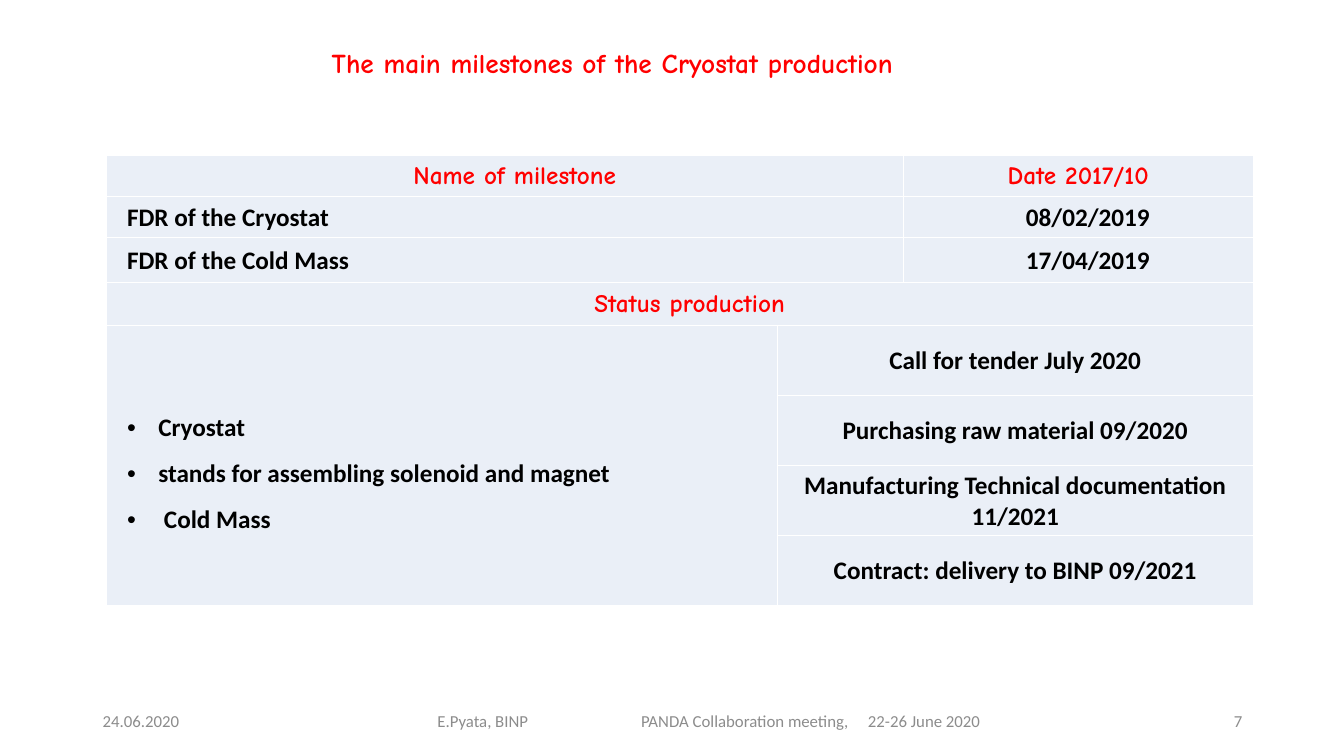
"""Build the slide on the main milestones of the Cryostat production."""
from dataclasses import dataclass

from lxml.etree import SubElement
from pptx import Presentation
from pptx.dml.color import RGBColor
from pptx.enum.text import MSO_ANCHOR, MSO_AUTO_SIZE, PP_ALIGN
from pptx.oxml import parse_xml
from pptx.oxml.ns import nsdecls, qn
from pptx.slide import Slide
from pptx.table import Table, _Cell
from pptx.text.text import TextFrame
from pptx.util import Inches, Pt


@dataclass(frozen=True)
class Theme:
    heading_font: str = "Comic Neue"
    body_font: str = "Calibri"
    heading: str = "FF0000"
    body: str = "000000"
    footer: str = "8C8C8C"
    cell: str = "EAEFF7"
    border: str = "FFFFFF"
    title_size: float = 19.5
    table_size: float = 18
    footer_size: float = 12


@dataclass(frozen=True)
class Entry:
    row: int
    column: int
    lines: tuple[str, ...]
    row_span: int = 1
    column_span: int = 1
    left_margin: float = 0.2
    align: PP_ALIGN = PP_ALIGN.CENTER
    heading: bool = False
    bulleted: bool = False


@dataclass(frozen=True)
class Footer:
    text: str
    left: float
    width: float
    align: PP_ALIGN = PP_ALIGN.LEFT
    tabs: tuple[float, ...] = ()


THEME = Theme()
COLUMN_WIDTHS = (6.65, 1.25, 3.47)
STATUS_ROW = 4
STATUS_STEPS = (
    "Call for tender July 2020",
    "Purchasing raw material 09/2020",
    "Manufacturing Technical documentation 11/2021",
    "Contract: delivery to BINP 09/2021",
)
ROW_HEIGHTS = (0.41, 0.41, 0.44, 0.43) + (2.78 / len(STATUS_STEPS),) * len(STATUS_STEPS)
PRODUCTS = ("Cryostat", "stands for assembling solenoid and magnet", " Cold Mass")
ENTRIES = (
    Entry(0, 0, ("Name of milestone",), column_span=2, heading=True),
    Entry(0, 2, ("Date 2017/10",), left_margin=0.01, heading=True),
    Entry(1, 0, ("FDR of the Cryostat",), column_span=2, align=PP_ALIGN.LEFT),
    Entry(1, 2, ("08/02/2019",)),
    Entry(2, 0, ("FDR of the Cold Mass",), column_span=2, align=PP_ALIGN.LEFT),
    Entry(2, 2, ("17/04/2019",)),
    Entry(3, 0, ("Status production",), column_span=3, heading=True),
    Entry(STATUS_ROW, 0, PRODUCTS, row_span=len(STATUS_STEPS), align=PP_ALIGN.LEFT, bulleted=True),
    *(
        Entry(STATUS_ROW + index, 1, (step,), column_span=2, left_margin=0.01)
        for index, step in enumerate(STATUS_STEPS)
    ),
)
FOOTERS = (
    Footer("24.06.2020", 0.92, 3),
    Footer(
        "E.Pyata, BINP\tPANDA Collaboration meeting,\t22-26 June 2020",
        4.24, 5.8, tabs=(2.02, 4.27),
    ),
    Footer("7", 9.42, 3, PP_ALIGN.RIGHT),
)


def write_text(
    frame: TextFrame,
    *lines: str,
    size: float,
    color: str,
    font: str = THEME.body_font,
    bold: bool = False,
    align: PP_ALIGN = PP_ALIGN.LEFT,
    line_spacing: float = 1.0,
    bulleted: bool = False,
    tabs: tuple[float, ...] = (),
) -> None:
    """Fill a text frame with one formatted paragraph for each line."""
    for index, line in enumerate(lines):
        paragraph = frame.paragraphs[0] if index == 0 else frame.add_paragraph()
        properties = paragraph._p.get_or_add_pPr()
        if bulleted:
            properties.set("marL", str(Inches(0.31)))
            properties.set("indent", str(-Inches(0.31)))
            SubElement(properties, qn("a:buFont"), typeface="Arial")
            SubElement(properties, qn("a:buChar"), char="•")
        if tabs:
            tab_list = SubElement(properties, qn("a:tabLst"))
            for position in tabs:
                SubElement(tab_list, qn("a:tab"), pos=str(Inches(position)), algn="l")
        paragraph.alignment = align
        paragraph.line_spacing = line_spacing
        paragraph.space_before = Pt(0)
        run = paragraph.add_run()
        run.text = line
        run.font.name = font
        run.font.size = Pt(size)
        run.font.bold = bold
        run.font.color.rgb = RGBColor.from_string(color)


def add_title(slide: Slide, text: str) -> None:
    """Place and format the title placeholder."""
    title = slide.shapes.title
    title.left, title.top = Inches(0.92 + 0.56), Inches(0.47)
    title.width, title.height = Inches(9.29), Inches(0.4)
    frame = title.text_frame
    frame.auto_size = MSO_AUTO_SIZE.NONE
    frame.vertical_anchor = MSO_ANCHOR.TOP
    write_text(
        frame, text, size=THEME.title_size, color=THEME.heading,
        font=THEME.heading_font, bold=True, align=PP_ALIGN.CENTER, line_spacing=0.8,
    )


def style_cell(cell: _Cell) -> None:
    """Give a cell its fill, borders, margins and anchor."""
    cell.fill.solid()
    cell.fill.fore_color.rgb = RGBColor.from_string(THEME.cell)
    cell.margin_left = cell.margin_right = cell.margin_top = Inches(0.01)
    cell.margin_bottom = 0
    cell.vertical_anchor = MSO_ANCHOR.MIDDLE
    properties = cell._tc.get_or_add_tcPr()
    for index, side in enumerate("LRTB"):
        properties.insert(index, parse_xml(
            f'<a:ln{side} {nsdecls("a")} w="{Pt(1)}"><a:solidFill>'
            f'<a:srgbClr val="{THEME.border}"/></a:solidFill></a:ln{side}>'
        ))


def fill_entry(table: Table, entry: Entry) -> None:
    """Merge the cells of an entry and write its text."""
    cell = table.cell(entry.row, entry.column)
    if entry.row_span * entry.column_span > 1:
        cell.merge(table.cell(
            entry.row + entry.row_span - 1, entry.column + entry.column_span - 1
        ))
    cell.margin_left = Inches(entry.left_margin)
    write_text(
        cell.text_frame, *entry.lines, size=THEME.table_size, bold=True,
        color=THEME.heading if entry.heading else THEME.body,
        font=THEME.heading_font if entry.heading else THEME.body_font,
        align=entry.align, bulleted=entry.bulleted,
        line_spacing=1.5 if entry.bulleted else 1.0,
    )


def add_milestones(slide: Slide) -> None:
    """Add the milestone table."""
    table = slide.shapes.add_table(
        len(ROW_HEIGHTS), len(COLUMN_WIDTHS), Inches(1.06), Inches(1.54),
        Inches(sum(COLUMN_WIDTHS)), Inches(sum(ROW_HEIGHTS)),
    ).table
    for column, width in zip(table.columns, COLUMN_WIDTHS):
        column.width = Inches(width)
    for row, height in zip(table.rows, ROW_HEIGHTS):
        row.height = Inches(height)
    for cell in table.iter_cells():
        style_cell(cell)
    for entry in ENTRIES:
        fill_entry(table, entry)


def add_footer(slide: Slide, footer: Footer) -> None:
    """Add one text of the footer line."""
    frame = slide.shapes.add_textbox(
        Inches(footer.left), Inches(6.95), Inches(footer.width), Inches(0.4)
    ).text_frame
    frame.word_wrap = True
    frame.vertical_anchor = MSO_ANCHOR.MIDDLE
    write_text(
        frame, footer.text, size=THEME.footer_size, color=THEME.footer,
        align=footer.align, tabs=footer.tabs,
    )


def main() -> None:
    """Build and save the presentation."""
    presentation = Presentation()
    presentation.slide_width, presentation.slide_height = Inches(13.33), Inches(7.5)
    slide = presentation.slides.add_slide(presentation.slide_layouts[5])
    add_title(slide, "The main milestones of the Cryostat production ")
    add_milestones(slide)
    for footer in FOOTERS:
        add_footer(slide, footer)
    presentation.save("out.pptx")


if __name__ == "__main__":
    main()
